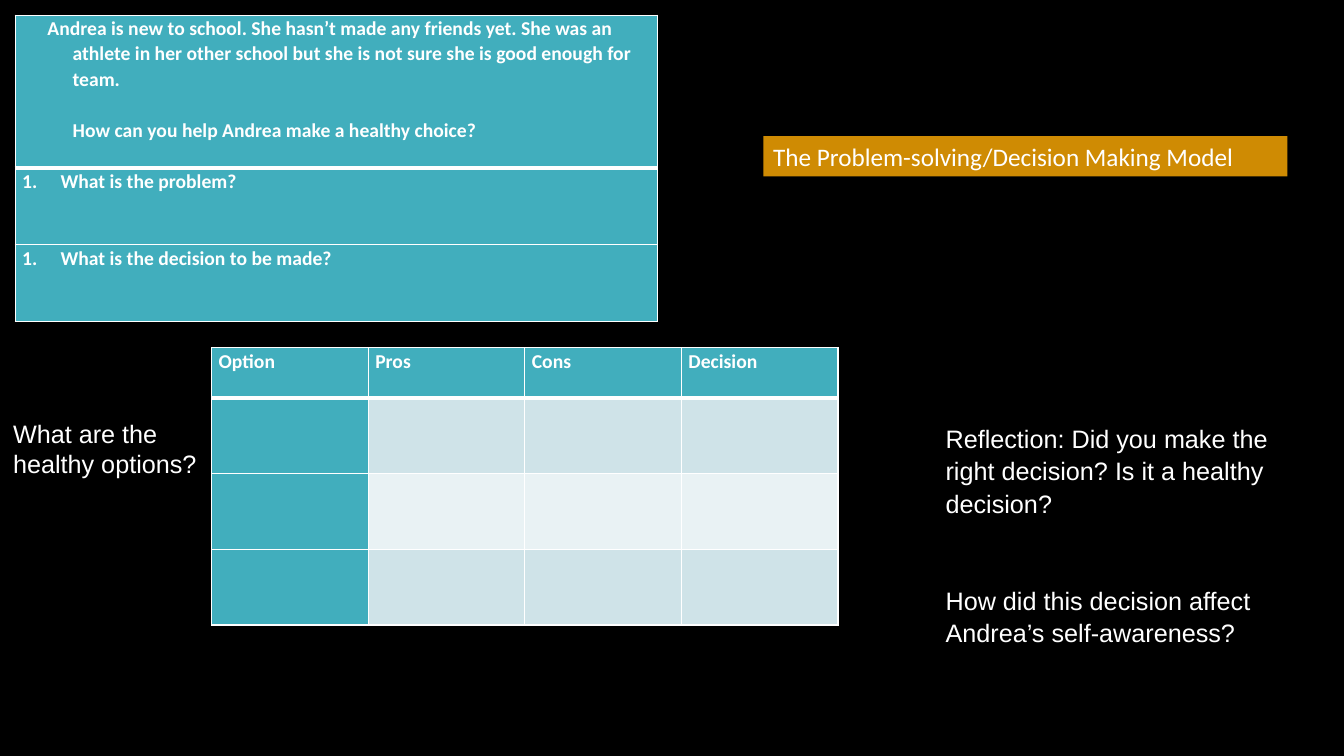
from lxml import etree
from pptx import Presentation
from pptx.dml.color import RGBColor
from pptx.enum.shapes import MSO_SHAPE
from pptx.enum.text import MSO_ANCHOR, PP_ALIGN
from pptx.oxml.ns import qn
from pptx.util import Inches, Pt

RECTANGLE = MSO_SHAPE.RECTANGLE
TOP = MSO_ANCHOR.TOP
LEFT = PP_ALIGN.LEFT

BLACK, WHITE = "000000", "FFFFFF"
TEAL, AMBER = "41AEBD", "CF8B03"
BAND, LIGHT_BAND = "CFE3E8", "E9F2F4"


def color(hex_value):
    return RGBColor.from_string(hex_value)


def item(text, left=0, hanging=0, before=0, numbered=False):
    return {"text": text, "left": left, "hanging": hanging, "before": before, "numbered": numbered}


class Worksheet:
    body_font, table_font = "Arial", "Calibri"
    body_size, table_size = 18, 14
    spacing = 1.07

    def __init__(self, presentation):
        self.width = presentation.slide_width
        self.height = presentation.slide_height
        self.slide = presentation.slides.add_slide(presentation.slide_layouts[6])
        self.slide.background.fill.solid()
        self.slide.background.fill.fore_color.rgb = color(BLACK)

    def across(self, percent):
        return round(self.width * percent / 100)

    def down(self, percent):
        return round(self.height * percent / 100)

    def box(self, left, top, width, height):
        return self.across(left), self.down(top), self.across(width), self.down(height)

    def fill_text(self, text_frame, items, font, size, bold=False, spacing=None):
        text_frame.word_wrap = True
        text_frame.text = "\n".join(entry["text"] for entry in items)
        for paragraph, entry in zip(text_frame.paragraphs, items):
            properties = paragraph._p.get_or_add_pPr()
            properties.set("marL", str(Inches(entry["left"])))
            properties.set("indent", str(Inches(-entry["hanging"])))
            if entry["numbered"]:
                etree.SubElement(properties, qn("a:buAutoNum"), type="arabicPeriod")
            paragraph.alignment = LEFT
            if spacing:
                paragraph.line_spacing = spacing
            if entry["before"]:
                paragraph.space_before = Pt(entry["before"])
            for run in paragraph.runs:
                run.font.name = font
                run.font.size = Pt(size)
                run.font.bold = bold
                run.font.color.rgb = color(WHITE)

    def text(self, position, items, spacing=None):
        shape = self.slide.shapes.add_textbox(*self.box(*position))
        self.fill_text(shape.text_frame, items, self.body_font, self.body_size, spacing=spacing)

    def banner(self, position, text):
        shape = self.slide.shapes.add_shape(RECTANGLE, *self.box(*position))
        shape.shadow.inherit = False
        shape.fill.solid()
        shape.fill.fore_color.rgb = color(AMBER)
        shape.line.fill.background()
        shape.text_frame.vertical_anchor = TOP
        self.fill_text(shape.text_frame, [item(text)], self.table_font, self.body_size)

    def border(self, cell, side, points):
        line = etree.SubElement(cell._tc.get_or_add_tcPr(), qn("a:ln" + side), w=str(Pt(points)))
        fill = etree.SubElement(line, qn("a:solidFill"))
        etree.SubElement(fill, qn("a:srgbClr"), val=WHITE)

    def table(self, left, top, width, row_heights, cells, fills):
        position = self.box(left, top, width, sum(row_heights))
        table = self.slide.shapes.add_table(len(cells), len(cells[0]), *position).table
        table.first_row = table.horz_banding = False
        for column in table.columns:
            column.width = self.across(width / len(cells[0]))
        for row_index, row in enumerate(table.rows):
            row.height = self.down(row_heights[row_index])
            for column_index, cell in enumerate(row.cells):
                for side in "LRTB":
                    under_header = (row_index, side) in ((0, "B"), (1, "T"))
                    self.border(cell, side, 3 if under_header else 1)
                cell.fill.solid()
                cell.fill.fore_color.rgb = color(fills[row_index][column_index])
                cell.margin_left = cell.margin_right = Inches(0.07)
                cell.margin_top = cell.margin_bottom = 0
                items = cells[row_index][column_index]
                if items:
                    self.fill_text(cell.text_frame, items, self.table_font, self.table_size,
                                   True, self.spacing)


def main():
    presentation = Presentation()
    presentation.slide_width = Inches(13.33)
    presentation.slide_height = Inches(7.5)
    worksheet = Worksheet(presentation)

    scenario = [
        item("Andrea is new to school. She hasn’t made any friends yet. She was an athlete "
             "in her other school but she is not sure she is good enough for team.", 0.5, 0.25),
        item("How can you help Andrea make a healthy choice?", 0.5, before=18.3),
    ]
    questions = ["What is the problem?", "What is the decision to be made?"]
    steps = [[[item(question, 0.38, 0.38, numbered=True)]] for question in questions]
    worksheet.table(1.13, 2, 47.8, [20.27, 10.13, 10.13], [[scenario]] + steps, [[TEAL]] * 3)

    worksheet.text((0.23, 54.67, 16.5, 9.47), [item("What are the healthy options?")])

    headings = ["Option", "Pros", "Cons", "Decision"]
    choices = [[[item(heading)] for heading in headings]] + [[None] * 4] * 3
    fills = [[TEAL] * 4] + [[TEAL] + [band] * 3 for band in (BAND, LIGHT_BAND, BAND)]
    worksheet.table(15.75, 46, 46.6, [6.67, 10, 10, 10], choices, fills)

    reflection = [
        item("Reflection: Did you make the right decision? Is it a healthy decision?"),
        item("How did this decision affect Andrea’s self-awareness?", before=46),
    ]
    worksheet.text((69.62, 55.07, 27.9, 39.87), reflection, worksheet.spacing)

    worksheet.banner((56.79, 18, 39, 5.33), "The Problem-solving/Decision Making Model")
    presentation.save("out.pptx")


if __name__ == "__main__":
    main()
